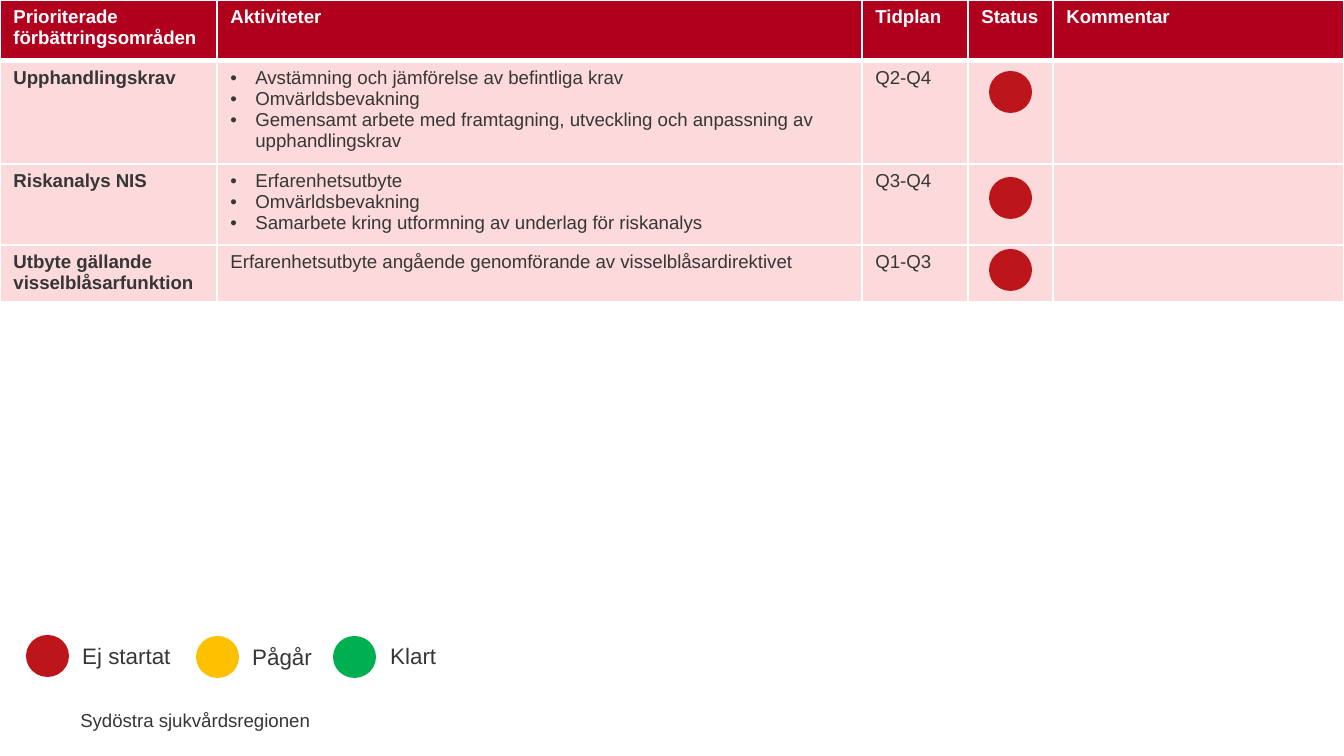
"""Build a status slide with an activity table and a colour legend."""
from lxml.etree import SubElement
from pptx import Presentation
from pptx.dml.color import RGBColor
from pptx.enum.shapes import MSO_SHAPE
from pptx.enum.text import MSO_ANCHOR, PP_ALIGN
from pptx.oxml.ns import qn
from pptx.util import Pt

PX = 914400 / 134.4
WHITE = RGBColor(0xFF, 0xFF, 0xFF)
TEXT = RGBColor(0x36, 0x36, 0x36)
HEADER = RGBColor(0xB1, 0x00, 0x1E)
ROW = RGBColor(0xFC, 0xD9, 0xDA)
RED = RGBColor(0xBC, 0x15, 0x1C)
YELLOW = RGBColor(0xFF, 0xC0, 0x00)
GREEN = RGBColor(0x00, 0xB0, 0x50)

COLUMN_WIDTHS = [217, 645, 106, 85, 291]
ROW_HEIGHTS = [61, 103, 81, 57]
ROWS = [
    [["Prioriterade förbättringsområden"], ["Aktiviteter"], ["Tidplan"], ["Status"], ["Kommentar"]],
    [["Upphandlingskrav"],
     ["Avstämning och jämförelse av befintliga krav", "Omvärldsbevakning",
      "Gemensamt arbete med framtagning, utveckling och anpassning av upphandlingskrav"],
     ["Q2-Q4"], [], []],
    [["Riskanalys NIS"],
     ["Erfarenhetsutbyte", "Omvärldsbevakning",
      "Samarbete kring utformning av underlag för riskanalys"],
     ["Q3-Q4"], [], []],
    [["Utbyte gällande visselblåsarfunktion"],
     ["Erfarenhetsutbyte angående genomförande av visselblåsardirektivet"],
     ["Q1-Q3"], [], []],
]
LABELS = [
    ("Ej startat", 69, 636, 117, 12, PP_ALIGN.LEFT, False),
    ("Pågår", 239, 637, 202, 12, PP_ALIGN.LEFT, True),
    ("Klart", 377, 636, 146, 12, PP_ALIGN.LEFT, True),
    ("Sydöstra sjukvårdsregionen", 65, 702, 258, 10, PP_ALIGN.RIGHT, False),
]
CIRCLES = [(26, 635, RED), (196, 636, YELLOW), (333, 636, GREEN),
           (989, 71, RED), (989, 177, RED), (989, 249, RED)]


def px(*lengths):
    return [round(length * PX) for length in lengths]


def write(paragraph, text, **formats):
    paragraph.add_run().text = text
    for name, value in {"name": "Arial", **formats}.items():
        setattr(paragraph.runs[0].font, name, value)


presentation = Presentation()
presentation.slide_width, presentation.slide_height = px(1344, 756)
slide = presentation.slides.add_slide(presentation.slide_layouts[6])

table = slide.shapes.add_table(
    len(ROWS), len(COLUMN_WIDTHS), *px(0, 0, sum(COLUMN_WIDTHS), sum(ROW_HEIGHTS))).table
for column, width in zip(table.columns, COLUMN_WIDTHS):
    column.width = px(width)[0]
for row, height in zip(table.rows, ROW_HEIGHTS):
    row.height = px(height)[0]

for row_index, row in enumerate(ROWS):
    is_header = row_index == 0
    for column_index, lines in enumerate(row):
        cell = table.cell(row_index, column_index)
        properties = cell._tc.get_or_add_tcPr()
        for side in ("lnL", "lnR", "lnT", "lnB"):
            thick = (row_index, side) in ((0, "lnB"), (1, "lnT"))
            border = SubElement(properties, qn(f"a:{side}"), w=str(Pt(3 if thick else 1)))
            SubElement(SubElement(border, qn("a:solidFill")), qn("a:srgbClr"), val=str(WHITE))
        cell.fill.solid()
        cell.fill.fore_color.rgb = HEADER if is_header else ROW
        for line_index, line in enumerate(lines):
            frame = cell.text_frame
            paragraph = frame.add_paragraph() if line_index else frame.paragraphs[0]
            if len(lines) > 1:
                paragraph_properties = paragraph._p.get_or_add_pPr()
                indent = px(25)[0]
                paragraph_properties.set("marL", str(indent))
                paragraph_properties.set("indent", str(-indent))
                SubElement(paragraph_properties, qn("a:buFont"), typeface="Arial")
                SubElement(paragraph_properties, qn("a:buChar"), char="•")
            write(paragraph, line, size=Pt(10), bold=is_header or column_index == 0)
            paragraph.runs[0].font.color.rgb = WHITE if is_header else TEXT

for left, top, color in CIRCLES:
    circle = slide.shapes.add_shape(MSO_SHAPE.OVAL, *px(left, top, 43, 42))
    circle.shadow.inherit = False
    circle.fill.solid()
    circle.fill.fore_color.rgb = color
    circle.line.fill.background()

for text, left, top, width, size, alignment, wraps in LABELS:
    label = slide.shapes.add_textbox(*px(left, top, width, 41 if size == 12 else 36))
    frame = label.text_frame
    frame.word_wrap = wraps
    frame.vertical_anchor = MSO_ANCHOR.TOP
    paragraph = frame.paragraphs[0]
    paragraph.alignment = alignment
    write(paragraph, text, size=Pt(size))
    paragraph.runs[0].font.color.rgb = TEXT

presentation.save("out.pptx")
